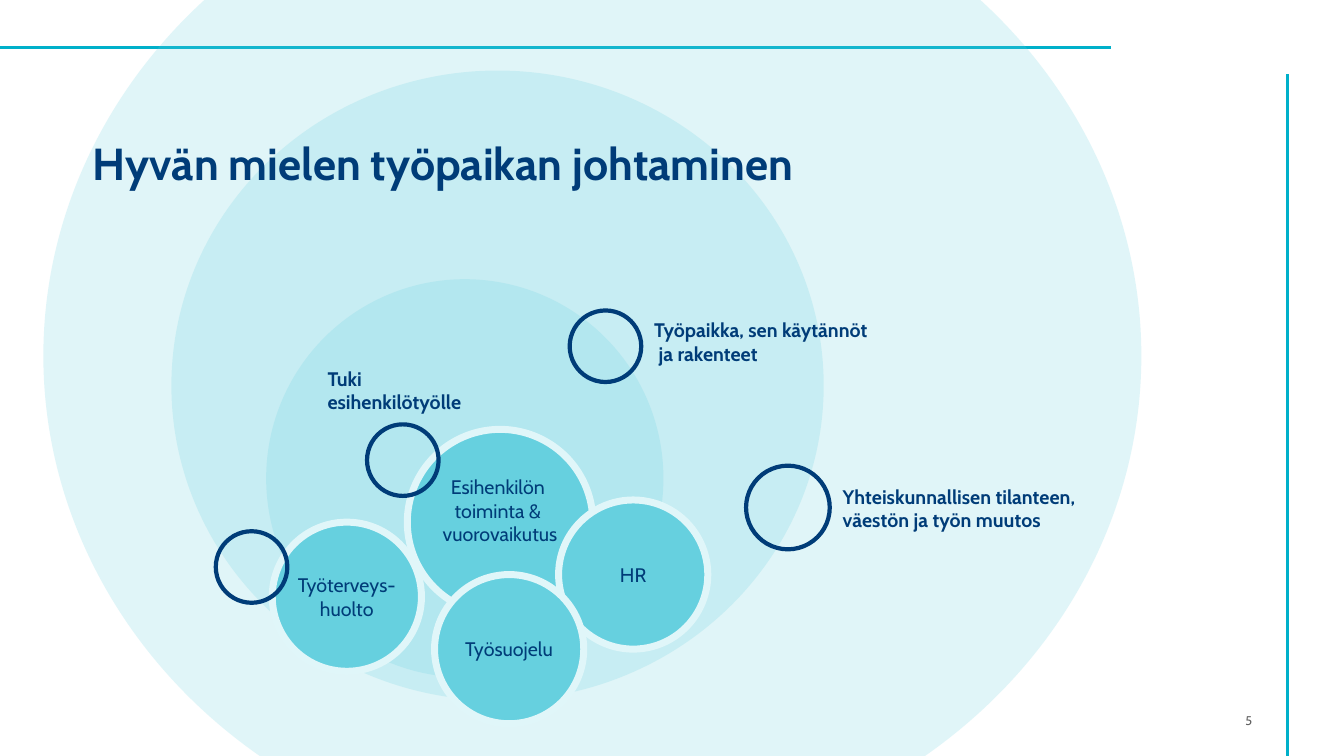
from lxml import etree
from pptx import Presentation
from pptx import util as u
from pptx.dml.color import RGBColor
from pptx.enum import shapes, text
from pptx.oxml.ns import qn

COLORS = {"navy": "003C78", "teal": "00B0CA", "aqua": "66D0DF",
          "pale": "E0F6F9", "grey": "606060"}
FONT = "Cabin"
CELL = u.Inches(1)  # one column or row of the slide grid
COLUMNS, ROWS = 13.33, 7.5


def grid(*cells):
    return [u.Emu(round(cell * CELL)) for cell in cells]


def color(name):
    return RGBColor.from_string(COLORS[name])


def within(box, left, top, width, height):
    """Turn a place inside a box into a place on the slide."""
    return box[0] + left, box[1] + top, width, height


def write(frame, paragraphs, size, name="navy", bold=False, align=text.PP_ALIGN.LEFT,
          anchor=text.MSO_ANCHOR.TOP, margins=(0, 0, 0, 0), wrap=True):
    """Fill a frame; each paragraph is a list of lines."""
    frame.word_wrap = wrap
    frame.vertical_anchor = anchor
    (frame.margin_left, frame.margin_top,
     frame.margin_right, frame.margin_bottom) = grid(*margins)
    for index, lines in enumerate(paragraphs):
        paragraph = frame.add_paragraph() if index else frame.paragraphs[0]
        paragraph.alignment = align
        for number, line in enumerate(lines):
            if number:
                paragraph.add_line_break()
            run = paragraph.add_run()
            run.text = line
            run.font.name = FONT
            run.font.size = u.Pt(size)
            run.font.bold = bold
            run.font.color.rgb = color(name)


def add_text(slide, place, paragraphs, size, **style):
    box = slide.shapes.add_textbox(*grid(*place))
    write(box.text_frame, paragraphs, size, **style)


def add_circle(slide, place, fill=None, line=None, width=0, alpha=None):
    circle = slide.shapes.add_shape(shapes.MSO_SHAPE.OVAL, *grid(*place))
    circle.shadow.inherit = False
    if fill:
        circle.fill.solid()
        circle.fill.fore_color.rgb = color(fill)
    else:
        circle.fill.background()
    if alpha:
        tint = circle.fill._xPr.find(".//" + qn("a:srgbClr"))
        etree.SubElement(tint, qn("a:alpha")).set("val", str(alpha * 1000))
    if line:
        circle.line.color.rgb = color(line)
        circle.line.width = u.Pt(width)
    else:
        circle.line.fill.background()
    return circle


def draw_frame(slide, box):
    """Rules along the top and right edges, and the slide number."""
    left, top, width, height = box
    right, bottom = left + width, top + height
    rules = [(left, top + 0.47, right - 2.31, top + 0.47),
             (right - 0.56, bottom, right - 0.56, top + 0.73)]
    for ends in rules:
        rule = slide.shapes.add_connector(shapes.MSO_CONNECTOR.STRAIGHT, *grid(*ends))
        rule.line.color.rgb = color("teal")
        rule.line.width = u.Pt(1.85)
        etree.SubElement(rule.line._get_or_add_ln().getparent(), qn("a:effectLst"))
    add_text(slide, (right - 2.14, bottom - 0.55, 1.23, 0.4), [["5"]], 9, name="grey",
             align=text.PP_ALIGN.RIGHT, anchor=text.MSO_ANCHOR.MIDDLE)


def draw_layers(slide, box):
    """Nested translucent circles, from the outermost in."""
    for place in [(0, 0, 10.89, 9.98), (1.27, 2.16, 6.47, 6.25), (2.21, 4.23, 3.94, 3.95)]:
        add_circle(slide, within(box, *place), fill="aqua", alpha=20)


def draw_title(slide, box):
    add_text(slide, box, [["Hyvän mielen työpaikan johtaminen"]], 32, bold=True,
             anchor=text.MSO_ANCHOR.BOTTOM)


def draw_actors(slide, box):
    """Filled circles; the last value lifts the text inside."""
    actors = [
        (1.34, 0, 1.84, [["Esihenkilön "], ["toiminta & "], ["vuorovaikutus"]], 0.23),
        (2.84, 0.7, 1.48, [["HR"]], 0),
        (1.61, 1.44, 1.48, [["Työsuojelu"]], 0),
        (0, 0.92, 1.48, [["Työterveys-", "huolto"]], 0),
    ]
    for left, top, size, words, lift in actors:
        circle = add_circle(slide, within(box, left, top, size, size),
                            fill="aqua", line="pale", width=5)
        write(circle.text_frame, words, 14, align=text.PP_ALIGN.CENTER,
              anchor=text.MSO_ANCHOR.MIDDLE, margins=(0, 0, 0, lift), wrap=False)


def draw_markers(slide, box):
    """Open rings, each with its label if it has one."""
    markers = [
        (0, 2.19, 0.71, None, None),
        (1.5, 1.13, 0.71, (1.01, 0.51), [["Tuki"], ["esihenkilötyölle"]]),
        (3.51, 0, 0.71, (4.25, 0.03), [["Työpaikka, sen käytännöt", " ja rakenteet"]]),
        (5.26, 1.54, 0.83, (6.12, 1.68),
         [["Yhteiskunnallisen tilanteen, väestön ja työn muutos"]]),
    ]
    for left, top, size, corner, words in markers:
        if words:
            add_text(slide, within(box, *corner, 3.12, 0.57), words, 14, bold=True,
                     margins=(0.1, 0.05, 0.1, 0.05))
        add_circle(slide, within(box, left, top, size, size), line="navy", width=3)


def main():
    presentation = Presentation()
    presentation.slide_width, presentation.slide_height = grid(COLUMNS, ROWS)
    slide = presentation.slides.add_slide(presentation.slide_layouts[6])
    draw_frame(slide, (0, 0, COLUMNS, ROWS))
    draw_layers(slide, (0.43, -1.46, 10.89, 9.98))
    draw_title(slide, (0.92, 1.03, 11.26, 0.85))
    draw_actors(slide, (2.7, 4.26, 4.32, 2.92))
    draw_markers(slide, (2.14, 3.08, 9.24, 2.9))
    presentation.save("out.pptx")


if __name__ == "__main__":
    main()
